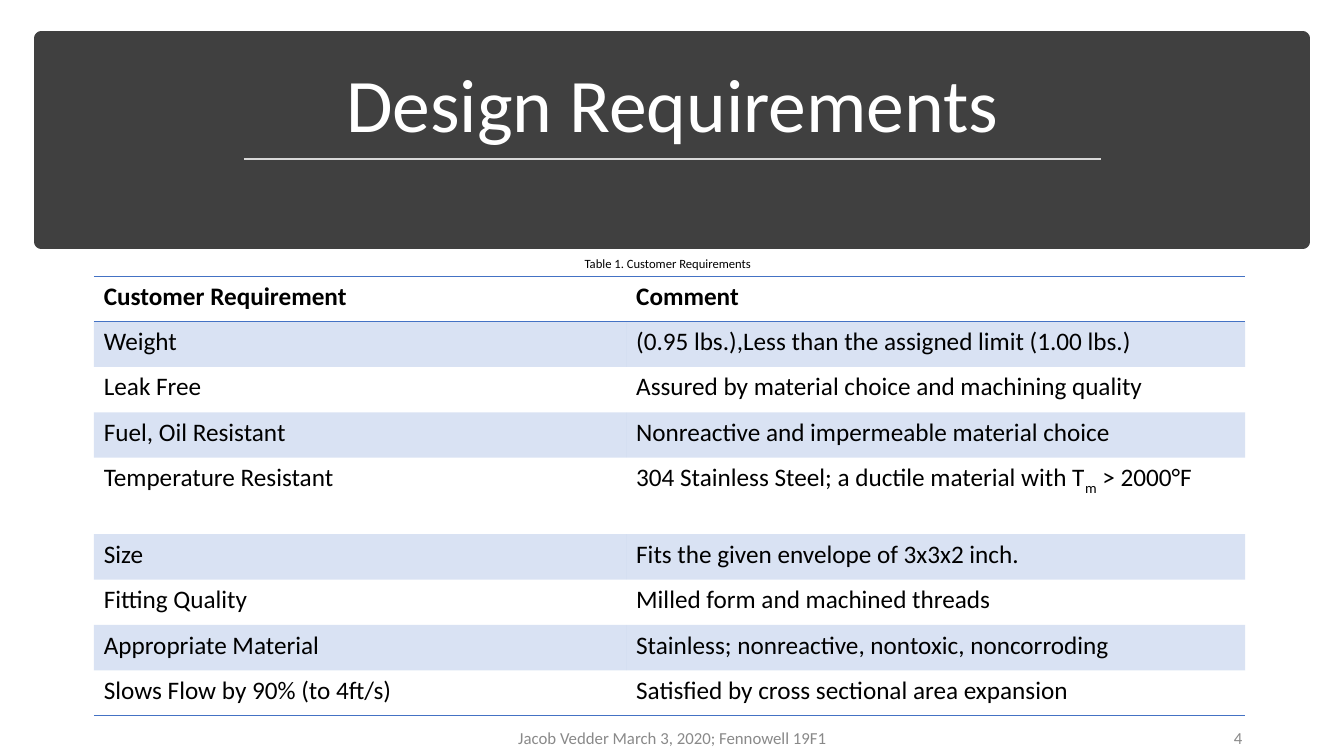
from lxml import etree
from pptx import Presentation
from pptx.dml.color import RGBColor
from pptx.enum.shapes import MSO_CONNECTOR, MSO_SHAPE
from pptx.enum.text import MSO_ANCHOR, MSO_AUTO_SIZE, PP_ALIGN
from pptx.oxml.ns import qn
from pptx.util import Inches, Pt

LEFT, CENTER, RIGHT = PP_ALIGN.LEFT, PP_ALIGN.CENTER, PP_ALIGN.RIGHT
TOP, MIDDLE, BOTTOM = MSO_ANCHOR.TOP, MSO_ANCHOR.MIDDLE, MSO_ANCHOR.BOTTOM
RECT, STRAIGHT = MSO_SHAPE.RECTANGLE, MSO_CONNECTOR.STRAIGHT
GROW, FIXED = MSO_AUTO_SIZE.SHAPE_TO_FIT_TEXT, MSO_AUTO_SIZE.NONE
PLAIN_TABLE = "{2D5ABB26-0587-4C30-8999-92F81FD0307C}"

REQUIREMENTS = [
    ("Customer Requirement", "Comment"),
    ("Weight", "(0.95 lbs.),Less than the assigned limit (1.00 lbs.)"),
    ("Leak Free", "Assured by material choice and machining quality"),
    ("Fuel, Oil Resistant", "Nonreactive and impermeable material choice"),
    ("Temperature Resistant",
     ["304 Stainless Steel; a ductile material with T", ("m", -25), " > 2000°F"]),
    ("Size", "Fits the given envelope of 3x3x2 inch."),
    ("Fitting Quality", "Milled form and machined threads"),
    ("Appropriate Material", "Stainless; nonreactive, nontoxic, noncorroding"),
    ("Slows Flow by 90% (to 4ft/s)", "Satisfied by cross sectional area expansion"),
]


def rgb(value):
    """Turn a hex string into a colour."""
    return RGBColor.from_string(value)


def apply(target, values):
    """Set each attribute in values on target."""
    for name, value in values.items():
        setattr(target, name, value)


class SlideBuilder:
    """Hold the style and the current slide."""

    font = "Calibri"
    black, white, gray = "000000", "FFFFFF", "898989"
    dark, rule, accent = "404040", "D9D9D9", "4472C4"

    def __init__(self, slide):
        """Keep the slide to draw on."""
        self.s = slide

    def rect(self, x, y, w, h, color):
        """Add a plain filled rectangle."""
        sp = self.s.shapes.add_shape(RECT, Inches(x), Inches(y), Inches(w), Inches(h))
        sp.shadow.inherit = False
        sp.fill.solid()
        sp.fill.fore_color.rgb = rgb(color)
        sp.line.color.rgb = rgb(color)
        sp.line.width = Pt(10)
        sp.line.fill.solid()
        sp.line.fill.fore_color.rgb = rgb(color)

    def line(self, x1, y1, x2, y2, color, width):
        """Add a straight line."""
        cn = self.s.shapes.add_connector(
            STRAIGHT, Inches(x1), Inches(y1), Inches(x2), Inches(y2))
        cn.line.color.rgb = rgb(color)
        cn.line.width = Pt(width)
        etree.SubElement(cn._element.spPr, qn("a:effectLst"))

    def run(self, p, text, size, color, bold=False, baseline=0):
        """Add a run to a paragraph."""
        r = p.add_run()
        r.text = text
        apply(r.font, {"name": self.font, "size": Pt(size), "bold": bold})
        r.font.color.rgb = rgb(color)
        if baseline:
            r.font._element.set("baseline", str(baseline * 1000))

    def text(self, x, y, w, h, text, size, color, anchor=TOP, fit=FIXED, **para):
        """Add a text box with one paragraph."""
        sp = self.s.shapes.add_textbox(Inches(x), Inches(y), Inches(w), Inches(h))
        tf = sp.text_frame
        apply(tf, {"word_wrap": True, "auto_size": fit, "vertical_anchor": anchor})
        p = tf.paragraphs[0]
        apply(p, para)
        self.run(p, text, size, color)

    def border(self, cell, side):
        """Add an accent border on one side of a cell."""
        tc_pr = cell._tc.get_or_add_tcPr()
        ln = etree.Element(qn(f"a:ln{side}"), w=str(Pt(1)))
        fill = etree.SubElement(ln, qn("a:solidFill"))
        etree.SubElement(fill, qn("a:srgbClr"), val=self.accent)
        tc_pr.insert(0, ln)

    def shade(self, cell):
        """Fill a cell with the accent at 20 percent."""
        cell.fill.solid()
        cell.fill.fore_color.rgb = rgb(self.accent)
        clr = cell._tc.tcPr.find(".//" + qn("a:srgbClr"))
        etree.SubElement(clr, qn("a:alpha"), val="20000")

    def table(self, x, y, widths, heights, rows):
        """Add a banded table with a ruled header and foot."""
        tbl = self.s.shapes.add_table(
            len(rows), len(widths), Inches(x), Inches(y),
            Inches(sum(widths)), Inches(sum(heights))).table
        tbl._tbl.tblPr.find(qn("a:tableStyleId")).text = PLAIN_TABLE
        apply(tbl, {"first_row": True, "horz_banding": False})
        for col, width in zip(tbl.columns, widths):
            col.width = Inches(width)
        for row, height in zip(tbl.rows, heights):
            row.height = Inches(height)
        for i, row in enumerate(rows):
            for j, content in enumerate(row):
                cell = tbl.cell(i, j)
                p = cell.text_frame.paragraphs[0]
                for part in [content] if isinstance(content, str) else content:
                    text, baseline = (part, 0) if isinstance(part, str) else part
                    self.run(p, text, 18, self.black, i == 0, baseline)
                if i % 2:
                    self.shade(cell)
                else:
                    cell.fill.background()
                if i in (0, len(rows) - 1):
                    self.border(cell, "B")
                if i == 0:
                    self.border(cell, "T")


def main():
    """Build the slide and save it."""
    prs = Presentation()
    apply(prs, {"slide_width": Inches(13.33), "slide_height": Inches(7.5)})
    b = SlideBuilder(prs.slides.add_slide(prs.slide_layouts[6]))
    b.rect(0.41, 0.38, 12.51, 2.02, b.dark)
    b.text(0.58, 0.51, 12.18, 1.02, "Design Requirements", 54, b.white,
           BOTTOM, alignment=CENTER, line_spacing=0.9)
    b.line(2.42, 1.58, 10.92, 1.58, b.rule, 1.75)
    footer = {"size": 12, "color": b.gray, "anchor": MIDDLE, "space_after": Pt(6)}
    b.text(4.42, 7.13, 4.5, 0.38, "Jacob Vedder March 3, 2020; Fennowell 19F1",
           alignment=CENTER, **footer)
    b.text(9.42, 7.13, 3, 0.38, "4", alignment=RIGHT, **footer)
    b.text(5.7, 2.49, 1.94, 0.25, "Table 1. Customer Requirements", 9, b.black,
           fit=GROW, alignment=LEFT, space_after=Pt(6))
    heights = [0.76 if row[0] == "Temperature Resistant" else 0.45
               for row in REQUIREMENTS]
    b.table(0.93, 2.74, [5.28, 6.14], heights, REQUIREMENTS)
    prs.save("out.pptx")


if __name__ == "__main__":
    main()
